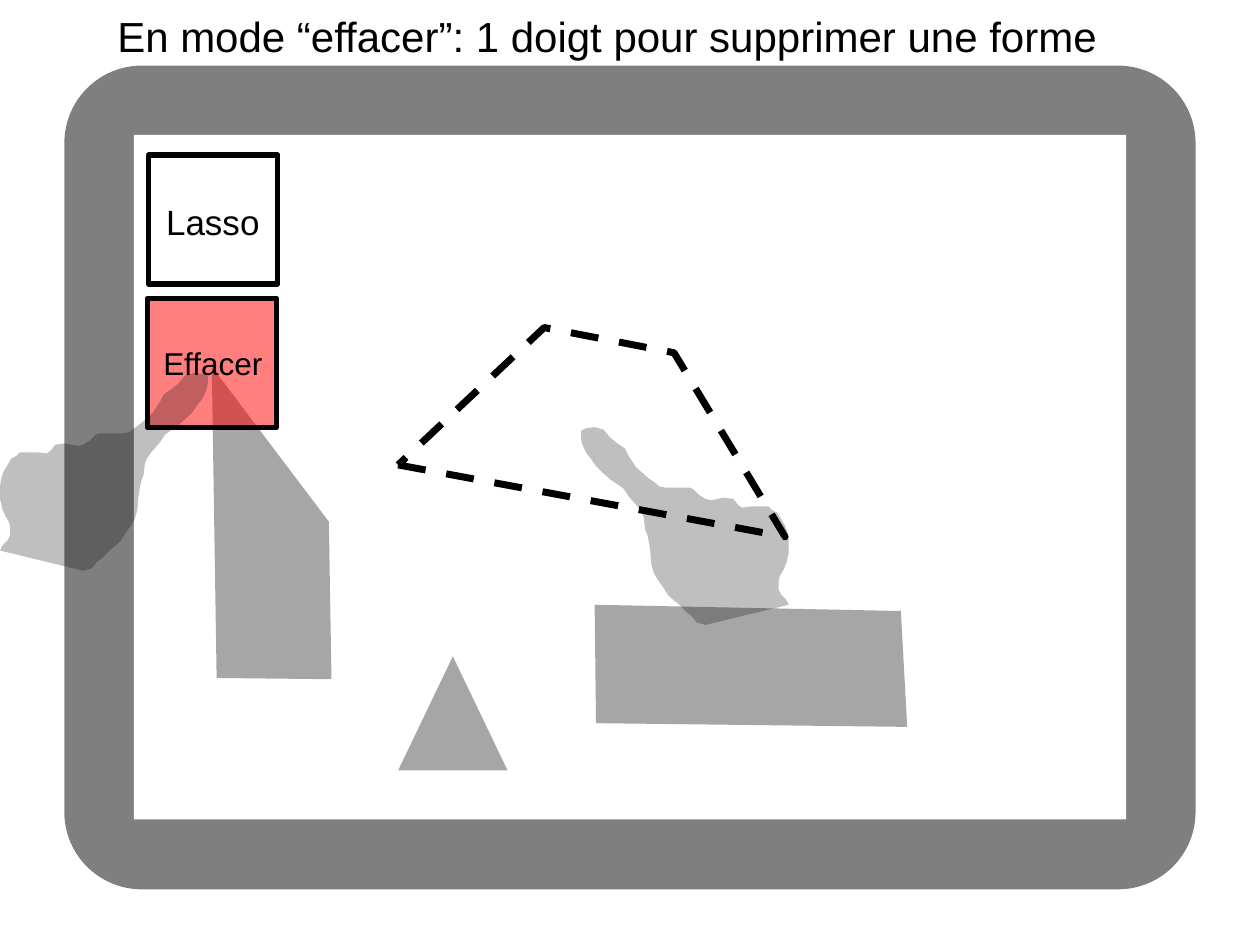
"""Build the slide that shows how one finger deletes a shape in erase mode."""
from dataclasses import dataclass

from lxml import etree
from pptx import Presentation
from pptx.dml.color import RGBColor
from pptx.enum.dml import MSO_LINE
from pptx.enum.shapes import MSO_SHAPE
from pptx.enum.text import MSO_ANCHOR, MSO_AUTO_SIZE, PP_ALIGN
from pptx.oxml.ns import qn
from pptx.util import Pt

RECTANGLE = MSO_SHAPE.RECTANGLE
ROUNDED = MSO_SHAPE.ROUNDED_RECTANGLE
TRIANGLE = MSO_SHAPE.ISOSCELES_TRIANGLE
DASH = MSO_LINE.DASH
TOP = MSO_ANCHOR.TOP
NO_FIT = MSO_AUTO_SIZE.NONE
LEFT, CENTER = PP_ALIGN.LEFT, PP_ALIGN.CENTER

COLORS = {"black": "000000", "white": "FFFFFF", "grey": "A6A6A6", "red": "FF0000"}
FRAME_FORMAT = {
    "word_wrap": True, "auto_size": NO_FIT, "vertical_anchor": TOP,
    "margin_top": Pt(3.6), "margin_bottom": Pt(3.6),
}
TITLE_LAYOUT = 5
HAND_UNIT = 0.72
HAND_WIDTH = 165
HAND_OUTLINE = [
    (99, 157), (92, 155), (88, 150), (84, 147), (77, 140), (72, 136), (69, 133),
    (66, 128), (61, 121), (58, 116), (56, 109), (55, 97), (53, 86), (51, 81),
    (50, 72), (49, 69), (45, 63), (38, 55), (34, 49), (30, 46), (24, 42),
    (16, 35), (12, 31), (8, 25), (4, 20), (1, 13), (0, 8), (0, 3), (4, 1),
    (11, 0), (18, 2), (23, 8), (29, 13), (35, 17), (38, 23), (42, 29), (44, 32),
    (53, 40), (60, 45), (62, 47), (67, 48), (75, 48), (86, 48), (89, 49),
    (94, 54), (99, 57), (103, 58), (109, 57), (113, 56), (121, 57), (125, 62),
    (128, 64), (135, 63), (149, 63), (152, 66), (156, 68), (159, 73), (162, 78),
    (164, 84), (165, 90), (165, 100), (163, 108), (161, 113), (158, 118),
    (157, 122), (157, 129), (159, 133), (163, 137), (165, 141),
]


@dataclass(frozen=True)
class Box:
    """A place on the page, in points."""
    left: float
    top: float
    width: float
    height: float

    def lengths(self) -> list:
        """Return the four values as lengths."""
        return [Pt(value) for value in (self.left, self.top, self.width, self.height)]


@dataclass(frozen=True)
class Style:
    """Fill colour and opacity, with an optional black outline."""
    fill: str = ""
    opacity: int = 100
    line_width: float = 0
    dashed: bool = False


@dataclass(frozen=True)
class Button:
    """A square tool button and its caption."""
    box: Box
    style: Style
    caption: str
    caption_box: Box
    size: int


SOLID_GREY = Style("grey")
HAND_STYLE = Style("black", 25)
COLUMN = [(123.8, 387.4), (121, 209.5), (187.9, 298.1), (189.4, 388.1)]
LASSO = [(227.5, 265.7), (448.6, 306.7), (385.2, 201.6), (311, 187.2)]
SLAB = [(339.8, 345.6), (340.6, 413.3), (518.4, 415.4), (514.8, 349.2)]
LASSO_BUTTON = Button(Box(85, 88.6, 73.7, 73.7), Style("white", 50, 3),
                      "Lasso", Box(87.8, 110.9, 67.7, 31.5), 20)
ERASE_BUTTON = Button(Box(84.2, 170.5, 73.7, 73.7), Style("red", 50, 3),
                      "Effacer", Box(76.3, 193, 90.7, 29), 18)


def rgb(name: str) -> RGBColor:
    """Return a named colour."""
    return RGBColor.from_string(COLORS[name])


def apply_style(shape, style: Style) -> None:
    """Set the fill, opacity and outline of a shape."""
    shape.shadow.inherit = False
    if style.fill:
        shape.fill.solid()
        shape.fill.fore_color.rgb = rgb(style.fill)
        if style.opacity < 100:
            color = shape.fill._xPr.find(f"{qn('a:solidFill')}/{qn('a:srgbClr')}")
            etree.SubElement(color, qn("a:alpha"), val=str(style.opacity * 1000))
    else:
        shape.fill.background()
    if style.line_width:
        shape.line.color.rgb = rgb("black")
        shape.line.width = Pt(style.line_width)
        if style.dashed:
            shape.line.dash_style = DASH
    else:
        shape.line.fill.background()


def add_preset(page, kind, box: Box, style: Style):
    """Add a preset shape."""
    shape = page.shapes.add_shape(kind, *box.lengths())
    apply_style(shape, style)
    return shape


def add_polygon(page, points: list, style: Style) -> None:
    """Add a closed outline through points given in points."""
    start, *others = [(Pt(x), Pt(y)) for x, y in points]
    builder = page.shapes.build_freeform(*start)
    builder.add_line_segments(others, close=True)
    apply_style(builder.convert_to_shape(), style)


def add_hand(page, left: float, top: float, mirrored: bool = False) -> None:
    """Add a translucent pointing hand."""
    points = [(left + HAND_UNIT * (HAND_WIDTH - x if mirrored else x), top + HAND_UNIT * y)
              for x, y in HAND_OUTLINE]
    add_polygon(page, points, HAND_STYLE)


def write_text(shape, text: str, size: int, align, side_margin: float) -> None:
    """Write one formatted line of text in a shape."""
    frame = shape.text_frame
    margins = {"margin_left": Pt(side_margin), "margin_right": Pt(side_margin)}
    for name, value in {**FRAME_FORMAT, **margins}.items():
        setattr(frame, name, value)
    para = frame.paragraphs[0]
    para.alignment = align
    span = para.add_run()
    span.text = text
    for name, value in {"name": "Arial", "size": Pt(size), "bold": False}.items():
        setattr(span.font, name, value)
    span.font.color.rgb = rgb("black")


def add_button(page, button: Button) -> None:
    """Add a tool button with its caption."""
    add_preset(page, RECTANGLE, button.box, button.style)
    caption = page.shapes.add_textbox(*button.caption_box.lengths())
    write_text(caption, button.caption, button.size, CENTER, 0)


def add_title(page, text: str, box: Box) -> None:
    """Move and fill the title placeholder."""
    title = page.shapes.title
    for name, value in zip(("left", "top", "width", "height"), box.lengths()):
        setattr(title, name, value)
    write_text(title, text, 24, LEFT, 7.2)


def main() -> None:
    """Build and save the deck."""
    deck = Presentation()
    deck.slide_width, deck.slide_height = Pt(720), Pt(540)
    page = deck.slides.add_slide(deck.slide_layouts[TITLE_LAYOUT])
    add_title(page, "En mode “effacer”: 1 doigt pour supprimer une forme",
              Box(59.8, 2.2, 619.9, 36.7))
    tablet = add_preset(page, ROUNDED, Box(36.8, 37.5, 646.4, 470.7), Style("black", 50))
    tablet.adjustments[0] = 0.094
    add_preset(page, RECTANGLE, Box(76.5, 77.1, 567, 391.2), Style("white"))
    add_polygon(page, COLUMN, SOLID_GREY)
    add_polygon(page, LASSO, Style(line_width=4, dashed=True))
    add_polygon(page, SLAB, SOLID_GREY)
    add_button(page, LASSO_BUTTON)
    add_hand(page, 331.9, 244.1)
    add_button(page, ERASE_BUTTON)
    add_hand(page, 0, 213.1, mirrored=True)
    add_preset(page, TRIANGLE, Box(227.5, 375.1, 62.6, 65.2), SOLID_GREY)
    deck.save("out.pptx")


if __name__ == "__main__":
    main()
